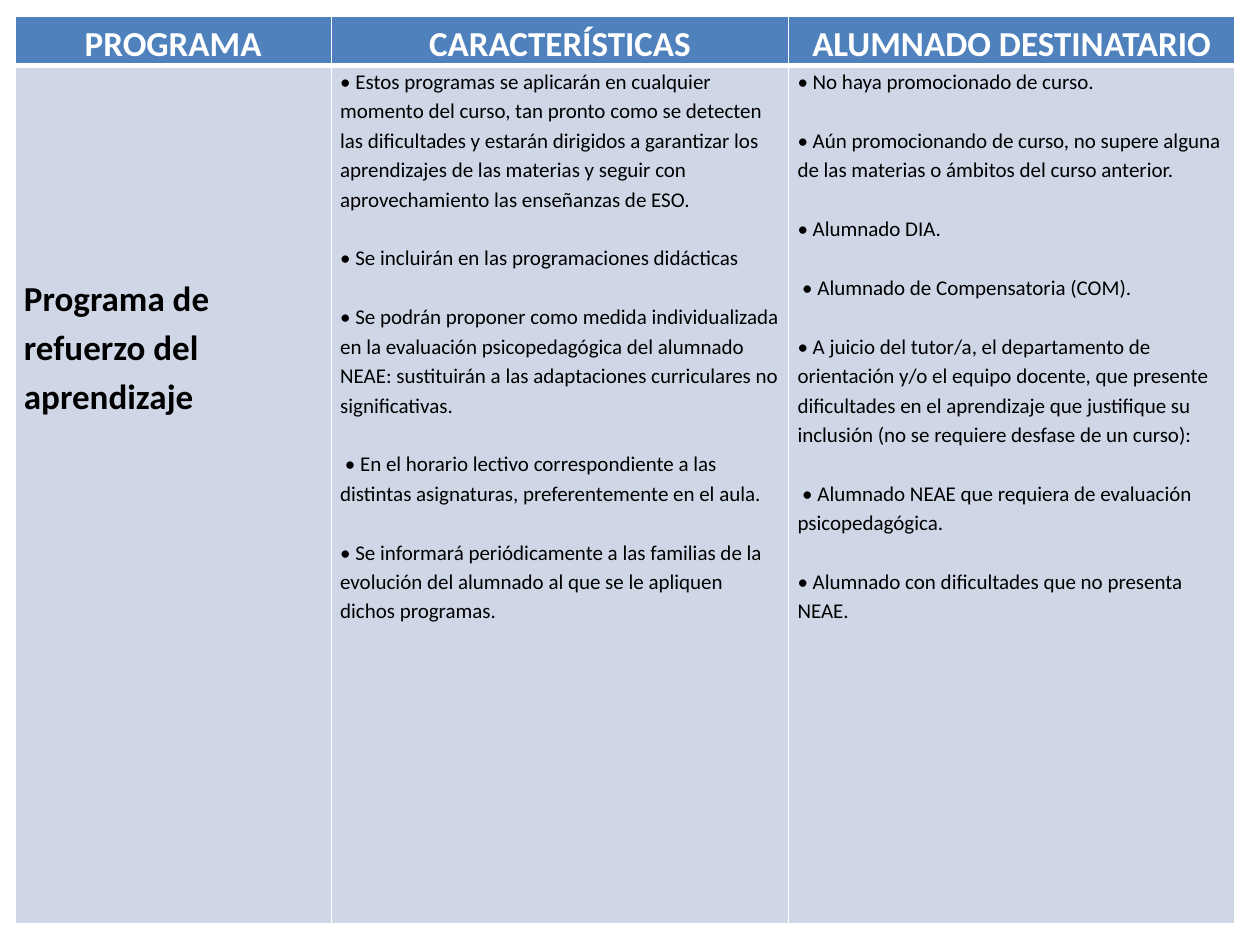
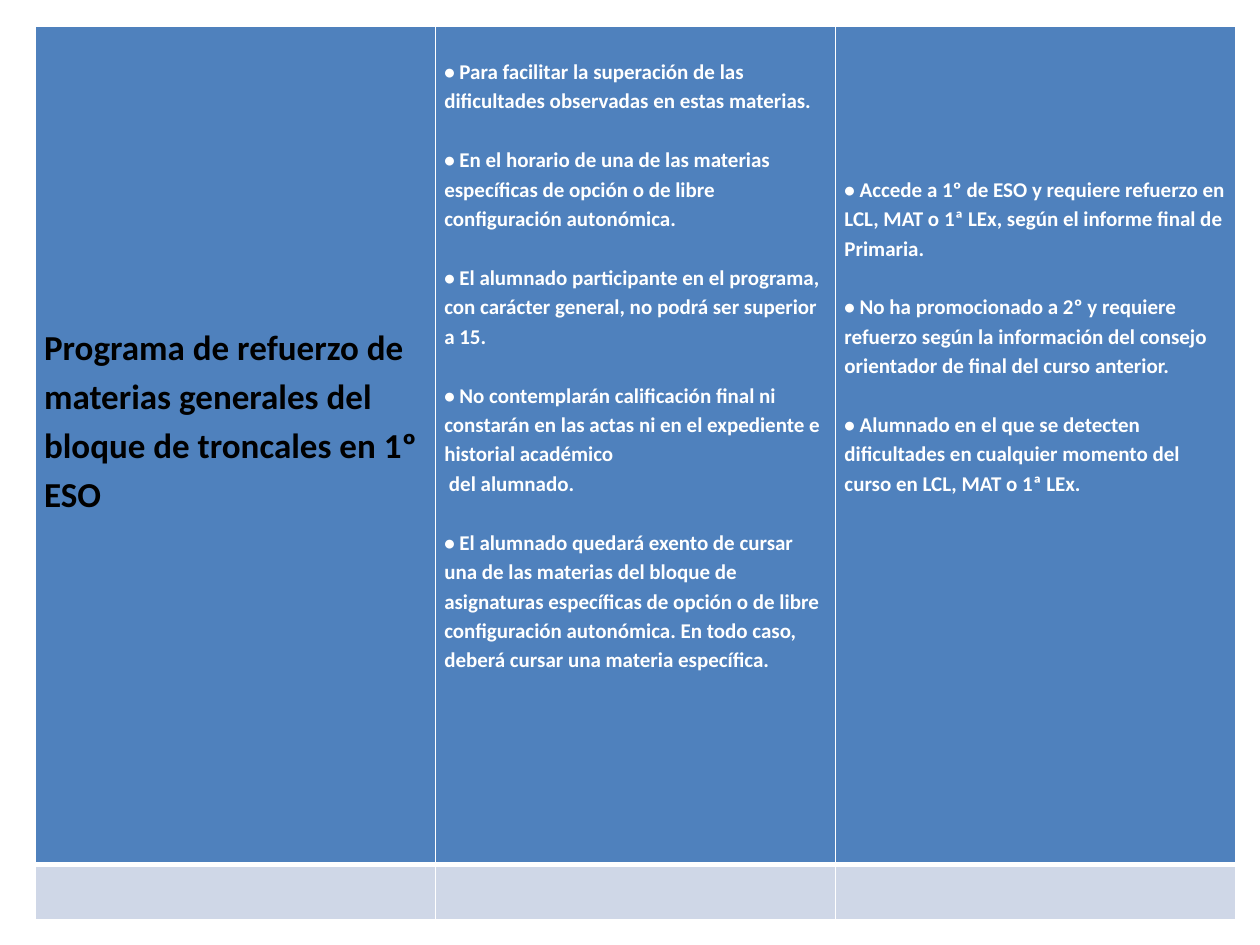
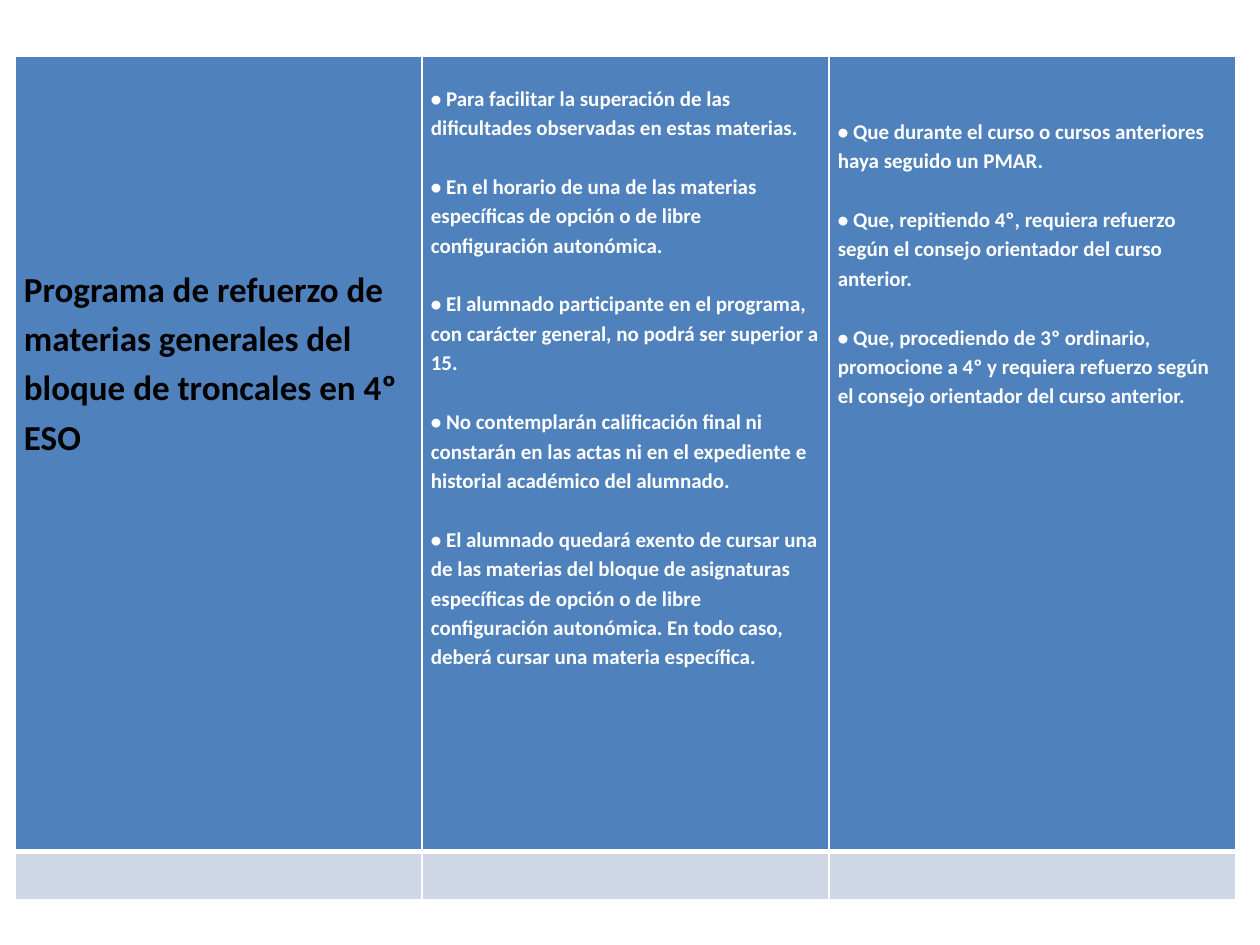
from lxml import etree
from pptx import Presentation
from pptx.dml.color import RGBColor
from pptx.enum.text import PP_ALIGN
from pptx.oxml.ns import qn
from pptx.util import Inches, Pt

LEFT, CENTER = PP_ALIGN.LEFT, PP_ALIGN.CENTER
COLORS = {"header": "4F81BD", "body": "CFD7E7", "white": "FFFFFF", "black": "000000"}
FONT = "Calibri"
SPACING = 1.15
TEXT_SIZE, TITLE_SIZE = 12, 20
LINE = 16.8
THIN, THICK = 1, 3
BULLET = "•"

HEADINGS = ["PROGRAMA", "CARACTERÍSTICAS", "ALUMNADO DESTINATARIO"]

LEARNING_FEATURES = [
    "• Estos programas se aplicarán en cualquier momento del curso, tan pronto como se detecten "
    "las dificultades y estarán dirigidos a garantizar los aprendizajes de las materias y seguir "
    "con aprovechamiento las enseñanzas de ESO.",
    "• Se incluirán en las programaciones didácticas",
    "• Se podrán proponer como medida individualizada en la evaluación psicopedagógica del "
    "alumnado NEAE: sustituirán a las adaptaciones curriculares no significativas.",
    " • En el horario lectivo correspondiente a las distintas asignaturas, preferentemente en el aula.",
    "• Se informará periódicamente a las familias de la evolución del alumnado al que se le "
    "apliquen dichos programas.",
]
LEARNING_STUDENTS = [
    "• No haya promocionado de curso.",
    "• Aún promocionando de curso, no supere alguna de las materias o ámbitos del curso anterior.",
    "• Alumnado DIA.",
    " • Alumnado de Compensatoria (COM).",
    "• A juicio del tutor/a, el departamento de orientación y/o el equipo docente, que presente "
    "dificultades en el aprendizaje que justifique su inclusión (no se requiere desfase de un curso):",
    " • Alumnado NEAE que requiera de evaluación psicopedagógica.",
    "• Alumnado con dificultades que no presenta NEAE.",
]
CORE_START = [
    "• Para facilitar la superación de las dificultades observadas en estas materias.",
    "• En el horario de una de las materias específicas de opción o de libre configuración autonómica.",
    "• El alumnado participante en el programa, con carácter general, no podrá ser superior a 15.",
]
CORE_RECORDS = ("• No contemplarán calificación final ni constarán en las actas ni en el expediente "
                "e historial académico")
CORE_OWNERS = " del alumnado."
CORE_EXEMPTION = (
    "• El alumnado quedará exento de cursar una de las materias del bloque de asignaturas "
    "específicas de opción o de libre configuración autonómica. En todo caso, deberá cursar una "
    "materia específica."
)
FIRST_YEAR_STUDENTS = [
    "• Accede a 1º de ESO y requiere refuerzo en LCL, MAT o 1ª LEx, según el informe final de Primaria.",
    "• No ha promocionado a 2º y requiere refuerzo según la información del consejo orientador "
    "de final del curso anterior.",
    "• Alumnado en el que se detecten dificultades en cualquier momento del curso en LCL, MAT o 1ª LEx.",
]
FOURTH_YEAR_STUDENTS = [
    "• Que durante el curso o cursos anteriores haya seguido un PMAR.",
    "• Que, repitiendo 4º, requiera refuerzo según el consejo orientador del curso anterior.",
    "• Que, procediendo de 3º ordinario, promocione a 4º y requiera refuerzo según el consejo "
    "orientador del curso anterior.",
]


def set_borders(cell, top, bottom):
    """Draw white borders around a cell, with the given top and bottom widths."""
    tc_pr = cell._tc.get_or_add_tcPr()
    for side, width in (("L", THIN), ("R", THIN), ("T", top), ("B", bottom)):
        ln = etree.SubElement(tc_pr, qn(f"a:ln{side}"), w=str(Pt(width)))
        fill = etree.SubElement(ln, qn("a:solidFill"))
        etree.SubElement(fill, qn("a:srgbClr"), val=COLORS["white"])


def add_table(prs, x, y, widths, heights):
    """Add a slide with a header row and a body row, and return the table."""
    s = prs.slides.add_slide(prs.slide_layouts[6])
    frame = s.shapes.add_table(len(heights), len(widths), Inches(x), Inches(y),
                               Inches(sum(widths)), Inches(sum(heights)))
    table = frame.table
    for column, width in zip(table.columns, widths):
        column.width = Inches(width)
    for i, (row, height) in enumerate(zip(table.rows, heights)):
        row.height = Inches(height)
        for cell in row.cells:
            cell.margin_left = cell.margin_right = Inches(0.07)
            cell.margin_top = cell.margin_bottom = 0
            set_borders(cell, THICK if i else THIN, THIN if i else THICK)
            cell.fill.solid()
            cell.fill.fore_color.rgb = RGBColor.from_string(COLORS["body" if i else "header"])
    return table


def write(cell, texts, size=TEXT_SIZE, color="black", bold=False, align=LEFT, drop=0):
    """Write paragraphs in a cell, one line apart, starting drop points below its top."""
    cell.margin_top = Pt(drop)
    tf = cell.text_frame
    for i, text in enumerate(texts):
        p = tf.add_paragraph() if i else tf.paragraphs[0]
        p.alignment = align
        p.line_spacing = SPACING
        p.space_before = Pt(LINE if i and BULLET in text else 0)
        r = p.add_run()
        r.text = text
        r.font.name = FONT
        r.font.size = Pt(size)
        r.font.bold = bold
        r.font.color.rgb = RGBColor.from_string(COLORS[color])


def write_program(table, row, name, features, students, drops, **text_format):
    """Fill one row with a program's name, its features and its students."""
    write(table.cell(row, 0), [name], size=TITLE_SIZE, bold=True, drop=drops[0])
    for column, texts in enumerate((features, students), start=1):
        write(table.cell(row, column), texts, drop=drops[column], **text_format)


def add_core_slide(prs, year, x, y, width, heights, features, students, drops):
    """Add the slide of the core subjects program for one year."""
    table = add_table(prs, x, y, [width / 3] * 3, heights)
    name = f"Programa de refuerzo de materias generales del bloque de troncales en {year} ESO"
    write_program(table, 0, name, features, students, drops, color="white", bold=True)


def main():
    """Build the three slides and save them."""
    prs = Presentation()
    prs.slide_width, prs.slide_height = Inches(10), Inches(7.5)

    table = add_table(prs, 0.12, 0.13, [2.51, 3.63, 3.54], [0.39, 6.81])
    for column, heading in enumerate(HEADINGS):
        write(table.cell(0, column), [heading], size=TITLE_SIZE, color="white", bold=True, align=CENTER)
    write_program(table, 1, "Programa de refuerzo del aprendizaje",
                  LEARNING_FEATURES, LEARNING_STUDENTS, [7 * LINE, 0, 0])

    add_core_slide(prs, "1º", 0.28, 0.21, 9.53, [6.65, 0.44],
                   CORE_START + [CORE_RECORDS, CORE_OWNERS, CORE_EXEMPTION],
                   FIRST_YEAR_STUDENTS, [10 * LINE, LINE, 5 * LINE])
    add_core_slide(prs, "4º", 0.12, 0.45, 9.69, [6.31, 0.38],
                   CORE_START + [CORE_RECORDS + CORE_OWNERS, CORE_EXEMPTION],
                   FOURTH_YEAR_STUDENTS, [7 * LINE, 14.6, 2 * LINE])

    prs.save("out.pptx")


if __name__ == "__main__":
    main()
